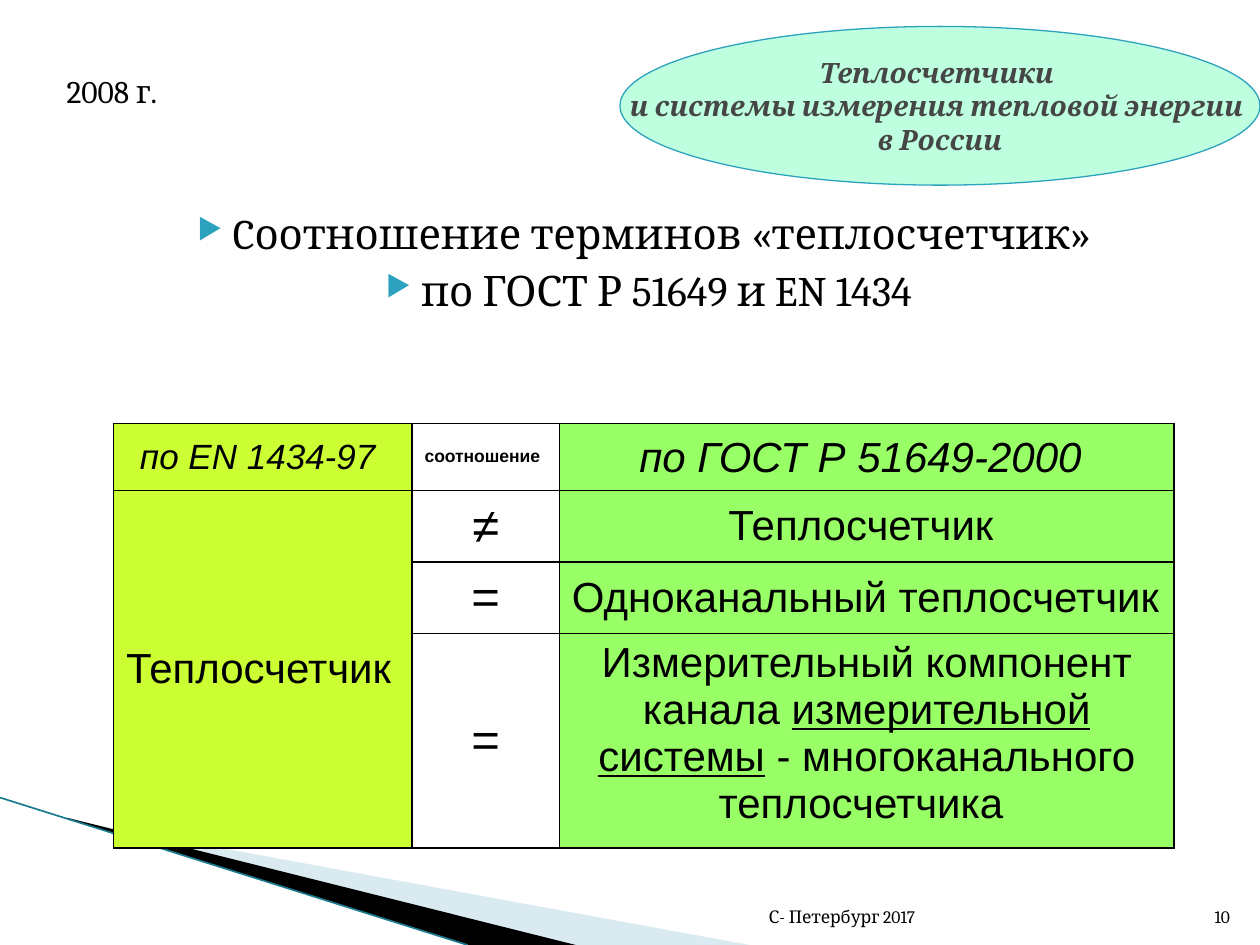
from lxml.etree import SubElement
from pptx import Presentation
from pptx.dml.color import RGBColor as RGB
from pptx.enum.shapes import MSO_CONNECTOR as CONN, MSO_SHAPE as SHAPE
from pptx.enum.text import MSO_ANCHOR as ANCHOR, PP_ALIGN as ALIGN
from pptx.oxml.ns import qn
from pptx.util import Inches, Pt

COL = {"black": "000000", "gray": "464646", "teal": "2DA2BF", "edge": "1B7A90",
       "pale": "A0CBDC", "mint": "BDFFDE", "lime": "CCFF33", "green": "99FF66"}

deck = Presentation()
deck.slide_width, deck.slide_height = Inches(10), Inches(7.5)
slide = deck.slides.add_slide(deck.slide_layouts[6])
shapes = slide.shapes
# All lengths below are percents of the slide's width and height
X, Y = deck.slide_width / 100, deck.slide_height / 100


def box(x, y, w, h):
    return int(x * X), int(y * Y), int(w * X), int(h * Y)


def style(run, size, face="Cambria", color="black", bold=False, ital=False):
    font = run.font
    font.size, font.name, font.bold, font.italic = Pt(size), face, bold, ital
    font.color.rgb = RGB.from_string(COL[color])


# Corner wedges
wedges = [("pale", [(5.5, 86.8), (59.5, 100), (45.6, 100), (5.5, 86.67)]),
          ("black", [(5.3, 86.53), (45.7, 100), (37.2, 100), (5.4, 86.67)])]
for color, spots in wedges:
    spots = [(int(x * X), int(y * Y)) for x, y in spots]
    path = shapes.build_freeform(*spots[0])
    path.add_line_segments(spots[1:], close=True)
    wedge = path.convert_to_shape()
    wedge.shadow.inherit = False
    wedge.fill.solid()
    wedge.fill.fore_color.rgb = RGB.from_string(COL[color])
    wedge.line.fill.background()
    if color == "pale":
        tint = wedge.fill._xPr.find(".//" + qn("a:srgbClr"))
        SubElement(tint, qn("a:alpha"), val="40000")

edge = shapes.add_connector(CONN.STRAIGHT, 0, int(84.4 * Y), int(37.1 * X), int(100 * Y))
edge.line.color.rgb = RGB.from_string(COL["edge"])
edge.line.width = Pt(0.95)
SubElement(edge._element.spPr, qn("a:effectLst"))

# Bulleted heading
head = shapes.add_textbox(*box(5.9, 21.3, 90, 20)).text_frame
head.word_wrap = True
head.text = "Cоотношение терминов «теплосчетчик» \nпо ГОСТ Р 51649 и EN 1434"
for i, para in enumerate(head.paragraphs):
    para.alignment = ALIGN.CENTER
    if i:
        para.space_before = Pt(4)
    props = para._p.get_or_add_pPr()
    props.set("marL", str(Inches(0.4)))
    props.set("indent", str(Inches(-0.28)))
    SubElement(SubElement(props, qn("a:buClr")), qn("a:srgbClr"), val=COL["teal"])
    SubElement(props, qn("a:buSzPct"), val="68000")
    SubElement(props, qn("a:buChar"), char="▶")
    style(para.runs[0], 24)

# Table of terms: row, column, fill, size, centred, runs
cols, rows = [23.7, 11.7, 48.8], [6.67, 7.15, 7.15, 21.2]
table = shapes.add_table(4, 3, *box(9, 44.8, sum(cols), sum(rows))).table
table.first_row = table.horz_banding = False
for col, w in zip(table.columns, cols):
    col.width = int(w * X)
for row, h in zip(table.rows, rows):
    row.height = int(h * Y)
table.cell(1, 0).merge(table.cell(3, 0))

terms = [
    (0, 0, 20, True, ["по EN 1434-97 "]),
    (0, 1, 10, False, ["соотношение"]),
    (0, 2, 24, True, ["по ГОСТ Р 51649-2000", " "]),
    (1, 0, 24, False, ["Теплосчетчик"]),
    (1, 1, 28, True, ["≠"]),
    (1, 2, 24, True, ["Теплосчетчик "]),
    (2, 1, 28, True, ["="]),
    (2, 2, 24, False, ["Одноканальный теплосчетчик"]),
    (3, 1, 28, True, ["="]),
    (3, 2, 24, True, ["Измерительный компонент канала ", "измерительной системы",
                      " - многоканального теплосчетчика "]),
]
for r, c, size, mid, parts in terms:
    cell = table.cell(r, c)
    cell.vertical_anchor = ANCHOR.TOP if (r, c) == (3, 2) else ANCHOR.MIDDLE
    para = cell.text_frame.paragraphs[0]
    para.alignment = ALIGN.CENTER if mid else ALIGN.LEFT
    for i, part in enumerate(parts):
        run = para.add_run()
        run.text = part
        last = r == 0 and i == 1
        style(run, 26 if last else size, "Arial", bold=(r, c) == (0, 1),
              ital=r == 0 and c != 1 and not last)
        if r == 3 and i == 1:
            run.font.underline = True

for r in range(4):
    for c, fill in enumerate(["lime", None, "green"]):
        cell = table.cell(r, c)
        props = cell._tc.get_or_add_tcPr()
        for side in ("lnL", "lnR", "lnT", "lnB"):
            line = SubElement(props, qn("a:" + side), w=str(Pt(1)))
            SubElement(SubElement(line, qn("a:solidFill")), qn("a:srgbClr"), val=COL["black"])
        if fill:
            cell.fill.solid()
            cell.fill.fore_color.rgb = RGB.from_string(COL[fill])
        else:
            cell.fill.background()

# Title oval
oval = shapes.add_shape(SHAPE.OVAL, *box(49.2, 2.8, 50.8, 16.8))
oval.shadow.inherit = False
oval.fill.solid()
oval.fill.fore_color.rgb = RGB.from_string(COL["mint"])
oval.line.color.rgb = RGB.from_string(COL["teal"])
oval.line.width = Pt(0.75)
frame = oval.text_frame
frame.word_wrap = False
frame.vertical_anchor = ANCHOR.MIDDLE
para = frame.paragraphs[0]
para.text = "Теплосчетчики \vи системы измерения тепловой энергии \vв России"
para.alignment = ALIGN.CENTER
for run in para.runs:
    style(run, 16, color="gray", bold=True, ital=True)

# Year, footer and page number
notes = [("2008 г.", 4.3, 6.93, 13.4, 18, ALIGN.LEFT, ANCHOR.TOP),
         ("С- Петербург 2017", 47.9, 93.47, 25.7, 10, ALIGN.RIGHT, ANCHOR.BOTTOM),
         ("10", 94.6, 93.47, 4, 10, ALIGN.RIGHT, ANCHOR.BOTTOM)]
for text, x, y, w, size, align, anchor in notes:
    frame = shapes.add_textbox(*box(x, y, w, 5.33)).text_frame
    frame.word_wrap = True
    frame.vertical_anchor = anchor
    frame.text = text
    frame.paragraphs[0].alignment = align
    style(frame.paragraphs[0].runs[0], size)

deck.save("out.pptx")
